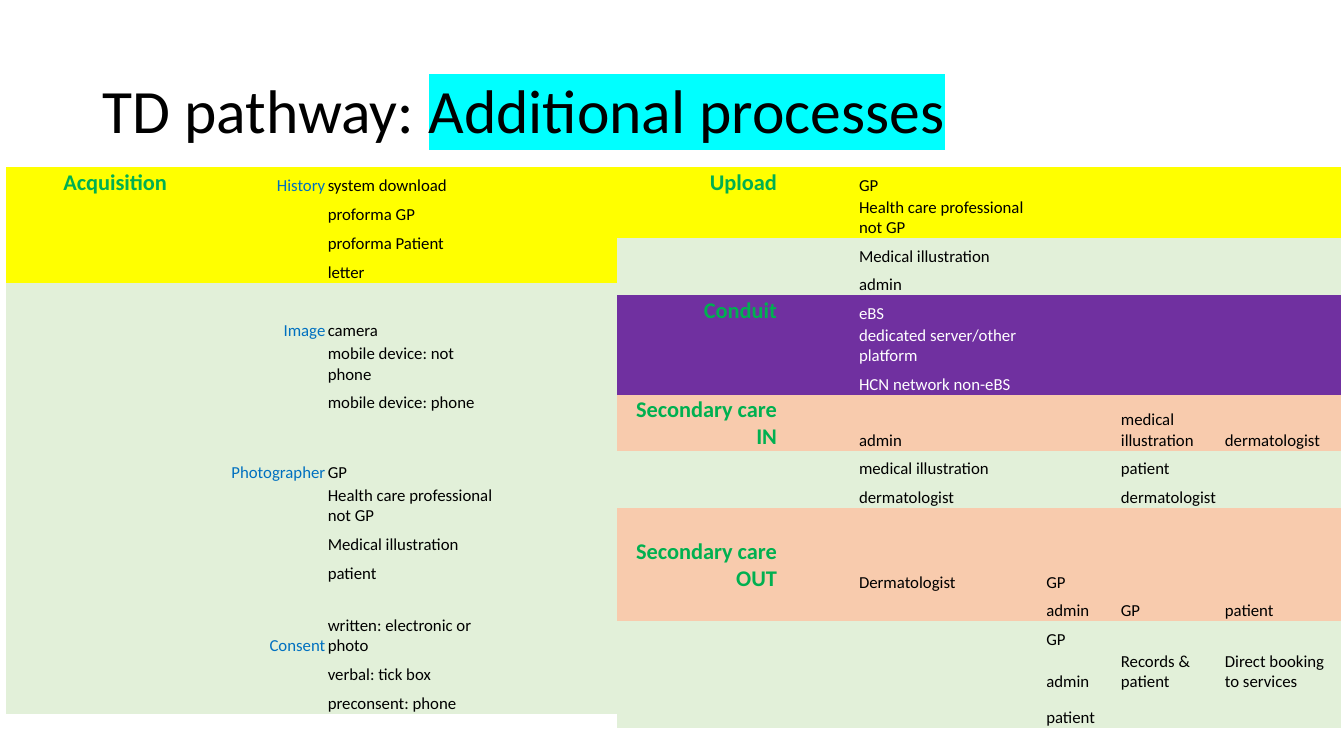
from lxml.etree import SubElement
from pptx import Presentation
from pptx.dml.color import RGBColor
from pptx.enum.text import MSO_ANCHOR, PP_ALIGN
from pptx.oxml.ns import qn
from pptx.util import Cm, Pt

BLACK = RGBColor(0x00, 0x00, 0x00)
WHITE = RGBColor(0xFF, 0xFF, 0xFF)
GREEN = RGBColor(0x00, 0xB0, 0x50)
BLUE = RGBColor(0x00, 0x70, 0xC0)
YELLOW = RGBColor(0xFF, 0xFF, 0x00)
PALE_GREEN = RGBColor(0xE2, 0xF0, 0xD9)
PURPLE = RGBColor(0x70, 0x30, 0xA0)
PEACH = RGBColor(0xF8, 0xCB, 0xAD)
CYAN = RGBColor(0x00, 0xFF, 0xFF)
FONT = "Calibri"
NO_GRID_STYLE = "{2D5ABB26-0587-4C30-8999-92F81FD0307C}"

# Each row: height in cm, fill, texts by column
LEFT_WIDTHS = [4.09, 3.99, 4.44, 1.27, 1.65]
LEFT_ROWS = [
    (0.73, YELLOW, {0: "Acquisition", 1: "History", 2: "system download"}),
    (0.73, YELLOW, {2: "proforma GP"}),
    (0.73, YELLOW, {2: "proforma Patient"}),
    (0.73, YELLOW, {2: "letter"}),
    (0.73, PALE_GREEN, {}),
    (0.73, PALE_GREEN, {1: "Image", 2: "camera"}),
    (1.09, PALE_GREEN, {2: "mobile device: not phone"}),
    (0.73, PALE_GREEN, {2: "mobile device: phone"}),
    (1.02, PALE_GREEN, {}),
    (0.73, PALE_GREEN, {1: "Photographer", 2: "GP"}),
    (1.09, PALE_GREEN, {2: "Health care professional not GP"}),
    (0.73, PALE_GREEN, {2: "Medical illustration"}),
    (0.73, PALE_GREEN, {2: "patient"}),
    (0.73, PALE_GREEN, {}),
    (1.09, PALE_GREEN, {1: "Consent", 2: "written: electronic or photo"}),
    (0.73, PALE_GREEN, {2: "verbal: tick box"}),
    (0.73, PALE_GREEN, {2: "preconsent: phone"}),
]
RIGHT_WIDTHS = [4.06, 2.01, 4.72, 1.88, 2.62, 2.95]
RIGHT_ROWS = [
    (0.72, YELLOW, {0: "Upload", 2: "GP"}),
    (1.06, YELLOW, {2: "Health care professional not GP"}),
    (0.72, PALE_GREEN, {2: "Medical illustration"}),
    (0.72, PALE_GREEN, {2: "admin"}),
    (0.72, PURPLE, {0: "Conduit", 2: "eBS"}),
    (1.06, PURPLE, {2: "dedicated server/other platform"}),
    (0.72, PURPLE, {2: "HCN network non-eBS"}),
    (1.39, PEACH, {0: "Secondary care IN", 2: "admin",
                   4: "medical illustration", 5: "dermatologist"}),
    (0.72, PALE_GREEN, {2: "medical illustration", 4: "patient"}),
    (0.72, PALE_GREEN, {2: "dermatologist", 4: "dermatologist"}),
    (0.72, PEACH, {}),
    (1.39, PEACH, {0: "Secondary care OUT", 2: "Dermatologist", 3: "GP"}),
    (0.72, PEACH, {3: "admin", 4: "GP", 5: "patient"}),
    (0.72, PALE_GREEN, {3: "GP"}),
    (1.06, PALE_GREEN, {3: "admin", 4: "Records & patient",
                        5: "Direct booking to services"}),
    (0.91, PALE_GREEN, {3: "patient"}),
]

deck = Presentation()
deck.slide_width, deck.slide_height = Cm(33.87), Cm(19.05)
page = deck.slides.add_slide(deck.slide_layouts[5])

# Title with a highlighted second part
title = page.shapes.title
title.left, title.top, title.width, title.height = Cm(2.33), Cm(1.01), Cm(29.21), Cm(3.68)
title.text_frame.vertical_anchor = MSO_ANCHOR.MIDDLE
para = title.text_frame.paragraphs[0]
para.alignment = PP_ALIGN.LEFT
para.line_spacing = 0.9
para.font.name, para.font.size = FONT, Pt(44)
para.font.color.rgb = BLACK
para.add_run().text = "TD pathway: "
span = para.add_run()
span.text = "Additional processes"
highlight = SubElement(span._r.get_or_add_rPr(), qn("a:highlight"))
SubElement(highlight, qn("a:srgbClr"), val=str(CYAN))

# Two pathway tables side by side
for left, widths, rows in ((0.15, LEFT_WIDTHS, LEFT_ROWS),
                           (15.55, RIGHT_WIDTHS, RIGHT_ROWS)):
    total_height = sum(row[0] for row in rows)
    table = page.shapes.add_table(len(rows), len(widths), Cm(left), Cm(4.22),
                                  Cm(sum(widths)), Cm(total_height)).table
    table.first_row = table.horz_banding = False
    table._tbl.tblPr.find(qn("a:tableStyleId")).text = NO_GRID_STYLE
    for column, width in zip(table.columns, widths):
        column.width = Cm(width)
    for row_index, (height, fill, texts) in enumerate(rows):
        table.rows[row_index].height = Cm(height)
        for column_index in range(len(widths)):
            cell = table.cell(row_index, column_index)
            cell.fill.solid()
            cell.fill.fore_color.rgb = fill
            cell.vertical_anchor = MSO_ANCHOR.BOTTOM
            cell.margin_left = cell.margin_right = cell.margin_top = Cm(0.03)
            cell.margin_bottom = 0
            cell.text = texts.get(column_index, "")
            para = cell.text_frame.paragraphs[0]
            para.alignment = PP_ALIGN.RIGHT if column_index < 2 else PP_ALIGN.LEFT
            para.font.name = FONT
            para.font.size = Pt(16 if column_index == 0 else 12)
            para.font.bold = column_index == 0
            body_color = WHITE if fill == PURPLE else BLACK
            para.font.color.rgb = {0: GREEN, 1: BLUE}.get(column_index, body_color)

deck.save("out.pptx")
